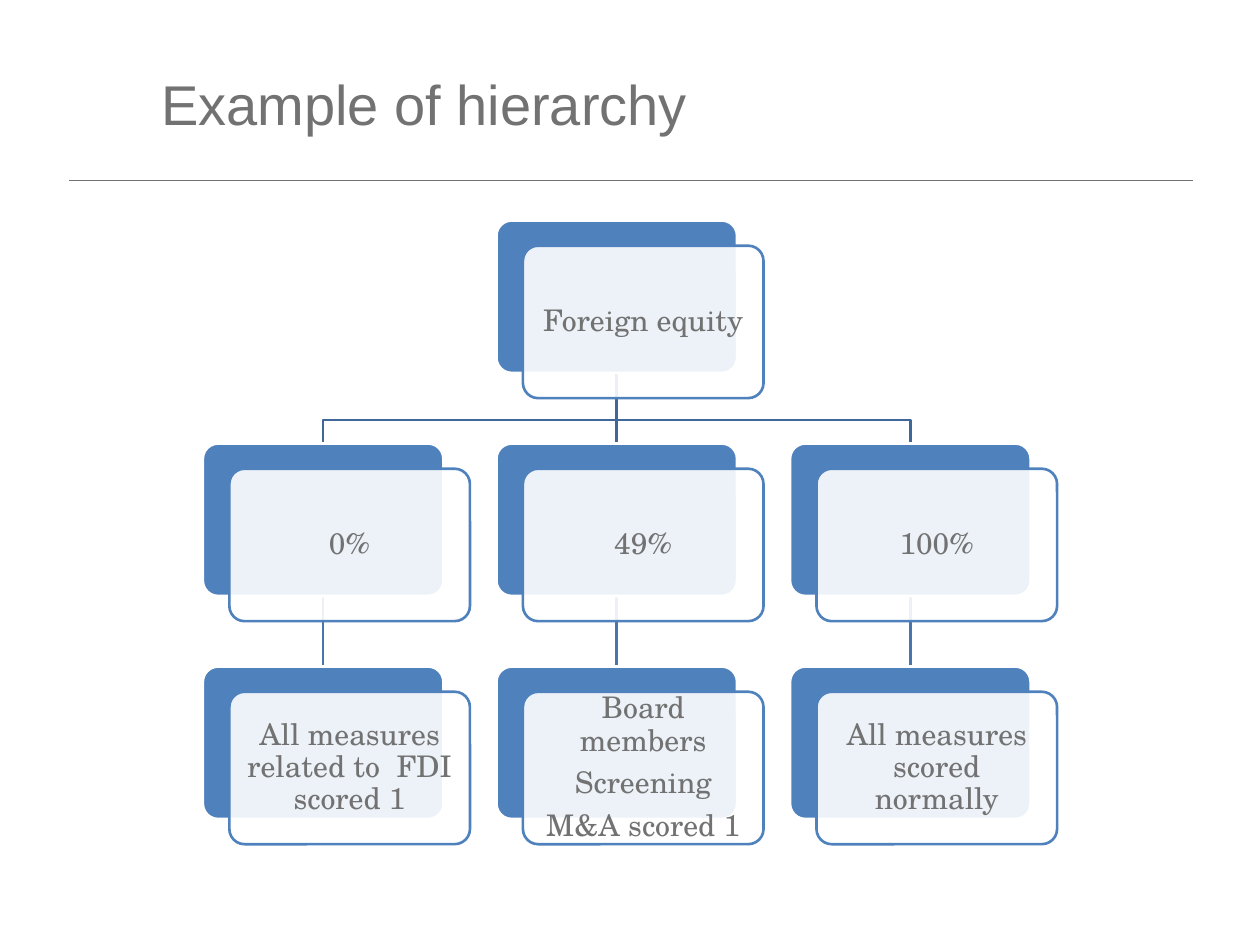
from dataclasses import dataclass

from lxml import etree
from pptx import Presentation
from pptx import util as u
from pptx.dml.color import RGBColor
from pptx.enum import shapes, text
from pptx.oxml import ns


@dataclass(frozen=True)
class Theme:
    grey: str = "727272"
    blue: str = "4F81BD"
    white: str = "FFFFFF"
    upper_link: str = "3F6797"
    lower_link: str = "4875AC"
    title_font: str = "Arial"
    card_font: str = "TeX Gyre Schola"
    title_size: int = 32
    card_size: int = 17
    outline: float = 1.5
    hairline: float = 0.5


class HierarchyPage:
    """Cards sit on a grid of columns and rows, measured in inches."""

    LEFT, TOP = 1.61, 1.75
    COLUMN, ROW = 2.33, 1.77
    WIDTH, HEIGHT = 1.91, 1.21
    SHIFT_X, SHIFT_Y = 0.21, 0.2
    INSET = 0.03
    BEND = 0.67

    def __init__(self, deck, theme):
        self.theme = theme
        self.page = deck.slides.add_slide(deck.slide_layouts[6])

    def corner(self, column, row):
        return self.LEFT + column * self.COLUMN, self.TOP + row * self.ROW

    def color(self, target, value):
        target.rgb = RGBColor.from_string(value)

    def stroke(self, shape, value, width):
        self.color(shape.line.color, value)
        shape.line.width = u.Pt(width)

    def label(self, area, lines, font, size, align, margin=None):
        box = self.page.shapes.add_textbox(*map(u.Inches, area))
        frame = box.text_frame
        frame.word_wrap = True
        frame.vertical_anchor = text.MSO_ANCHOR.MIDDLE
        if margin is not None:
            frame.margin_left = frame.margin_right = u.Inches(margin)
            frame.margin_top = frame.margin_bottom = u.Inches(margin)
        frame.text = "\n".join(lines)
        for para in frame.paragraphs:
            para.alignment = align
            para.font.name = font
            para.font.size = u.Pt(size)
            self.color(para.font.color, self.theme.grey)
        return frame

    def title(self, words):
        self.label((1.18, 0.26, 8.11, 1.12), [words], self.theme.title_font,
                   self.theme.title_size, text.PP_ALIGN.LEFT)

    def straight(self, start, end, value, width):
        line = self.page.shapes.add_connector(
            shapes.MSO_CONNECTOR.STRAIGHT, *map(u.Inches, (*start, *end)))
        self.stroke(line, value, width)
        etree.SubElement(line._element.spPr, ns.qn("a:effectLst"))

    def elbow(self, points, value, width):
        first, *rest = [tuple(map(u.Inches, point)) for point in points]
        builder = self.page.shapes.build_freeform(*first)
        builder.add_line_segments(rest, close=False)
        line = builder.convert_to_shape()
        line.shadow.inherit = False
        line.fill.background()
        self.stroke(line, value, width)

    def link(self, parent, child, value):
        (start_x, top), (end_x, end_y) = self.corner(*parent), self.corner(*child)
        start_x, end_x = start_x + self.WIDTH / 2, end_x + self.WIDTH / 2
        start_y = top + self.HEIGHT
        if parent[0] == child[0]:
            self.straight((start_x, start_y), (end_x, end_y), value, self.theme.outline)
        else:
            bend_y = start_y + self.BEND * (end_y - start_y)
            self.elbow([(start_x, start_y), (start_x, bend_y), (end_x, bend_y),
                        (end_x, end_y)], value, self.theme.outline)

    def panel(self, left, top, fill, line, opacity=None):
        shape = self.page.shapes.add_shape(
            shapes.MSO_SHAPE.ROUNDED_RECTANGLE,
            *map(u.Inches, (left, top, self.WIDTH, self.HEIGHT)))
        shape.adjustments[0] = 0.1
        shape.shadow.inherit = False
        shape.fill.solid()
        self.color(shape.fill.fore_color, fill)
        self.stroke(shape, line, self.theme.outline)
        if opacity is not None:
            tint = shape._element.spPr.find(ns.qn("a:solidFill"))[0]
            etree.SubElement(tint, ns.qn("a:alpha"), val=str(opacity * 1000))

    def card(self, column, row, lines):
        theme = self.theme
        left, top = self.corner(column, row)
        self.panel(left, top, theme.blue, theme.white)
        left, top = left + self.SHIFT_X, top + self.SHIFT_Y
        self.panel(left, top, theme.white, theme.blue, opacity=90)
        inner = (left + self.INSET, top + self.INSET,
                 self.WIDTH - 2 * self.INSET, self.HEIGHT - 2 * self.INSET)
        frame = self.label(inner, lines, theme.card_font, theme.card_size,
                           text.PP_ALIGN.CENTER, margin=0.07)
        for para in frame.paragraphs:
            para.line_spacing = 0.9
            para.space_after = u.Pt(6)


def main():
    deck = Presentation()
    deck.slide_width, deck.slide_height = u.Inches(10), u.Inches(7.5)
    theme = Theme()
    page = HierarchyPage(deck, theme)

    # Heading and rule
    page.straight((0.55, 1.43), (9.47, 1.43), theme.grey, theme.hairline)
    page.title("Example of hierarchy")

    # Links between the levels
    root = (1, 0)
    branches = [
        ("0%", ["All measures related to  FDI scored 1"]),
        ("49%", ["Board members", "Screening", "M&A scored 1"]),
        ("100%", ["All measures scored normally"]),
    ]
    for column in range(len(branches)):
        page.link((column, 1), (column, 2), theme.lower_link)
        page.link(root, (column, 1), theme.upper_link)

    # Cards
    page.card(*root, ["Foreign equity"])
    for column, (share, outcome) in enumerate(branches):
        page.card(column, 1, [share])
        page.card(column, 2, outcome)

    deck.save("out.pptx")


if __name__ == "__main__":
    main()
